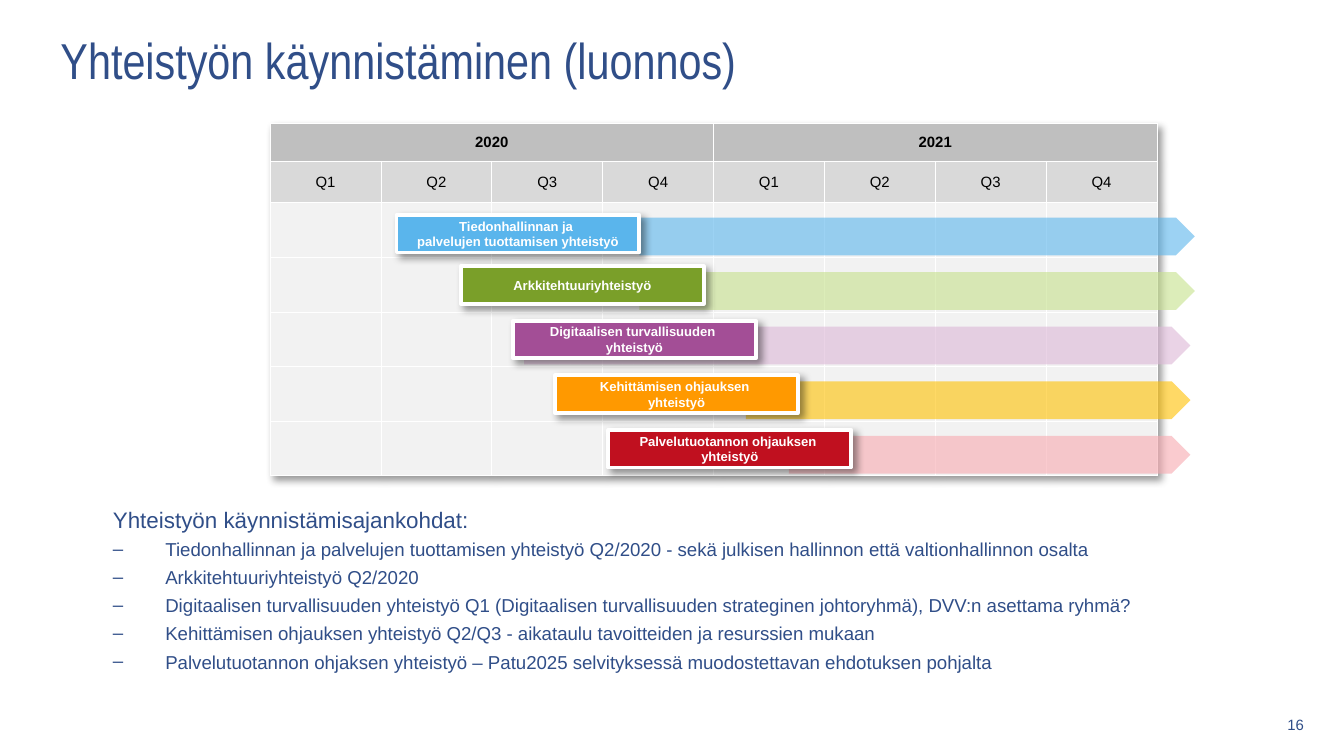
from dataclasses import dataclass

from lxml import etree
from pptx import Presentation
from pptx.dml.color import RGBColor
from pptx.enum import shapes, text
from pptx.oxml.ns import qn
from pptx.util import Emu, Inches, Pt

WIDE = Inches(10)
HIGH = WIDE * 9 // 16
LEFT, TOP = Inches(2.01), Inches(0.92)
COL, ROW = Inches(6.6) // 8, Inches(2.03) // 5
HEADS = Inches(0.28), Inches(0.31)
BODY = TOP + sum(HEADS)
BAR_W, BAR_H = 2.19, 0.69  # columns, rows

NAVY = RGBColor(0x30, 0x4E, 0x88)
BLACK = RGBColor(0, 0, 0)
WHITE = RGBColor(255, 255, 255)
GREYS = [RGBColor(0xBF, 0xBF, 0xBF), RGBColor(0xD9, 0xD9, 0xD9)] + [RGBColor(0xF2, 0xF2, 0xF2)] * 5
BLUE = RGBColor(0x5A, 0xB5, 0xEC)
LIME, GREEN = RGBColor(0xC6, 0xE1, 0x8B), RGBColor(0x7A, 0x9F, 0x29)
ROSE, RED = RGBColor(0xF8, 0xA9, 0xB0), RGBColor(0xC0, 0x10, 0x1F)
GOLD, AMBER = RGBColor(0xFF, 0xC0, 0x00), RGBColor(0xFF, 0x99, 0x00)
LILAC, PLUM = RGBColor(0xDC, 0xB6, 0xD6), RGBColor(0xA3, 0x4E, 0x96)

KIND = shapes.MSO_SHAPE
ALIGN = text.PP_ALIGN
MIDDLE = text.MSO_ANCHOR.MIDDLE


@dataclass
class Task:
    """One row of the plan; x values count columns, drop is a share of the row."""
    row: int
    start: float
    tail: float
    tip: float
    fill: RGBColor
    tint: RGBColor
    lines: list[str]
    drop: float = 0.16
    kind: KIND = KIND.RECTANGLE


TASKS = [
    Task(0, 1.14, 3.33, 8.34, BLUE, BLUE,
         ["Tiedonhallinnan ja ", "palvelujen tuottamisen yhteistyö"], 0.22, KIND.CHEVRON),
    Task(1, 1.72, 3.33, 8.34, GREEN, LIME, ["Arkkitehtuuriyhteistyö"]),
    Task(4, 3.05, 4.68, 8.3, RED, ROSE, ["Palvelutuotannon ohjauksen ", "yhteistyö"]),
    Task(3, 2.57, 4.29, 8.3, AMBER, GOLD, ["Kehittämisen ohjauksen ", "yhteistyö"]),
    Task(2, 2.19, 2.29, 8.3, PLUM, LILAC, ["Digitaalisen turvallisuuden ", "yhteistyö"]),
]
LIST = [
    "Tiedonhallinnan ja palvelujen tuottamisen yhteistyö Q2/2020 - sekä julkisen hallinnon että valtionhallinnon osalta",
    "Arkkitehtuuriyhteistyö Q2/2020",
    "Digitaalisen turvallisuuden yhteistyö Q1 (Digitaalisen turvallisuuden strateginen johtoryhmä), DVV:n asettama ryhmä?",
    "Kehittämisen ohjauksen yhteistyö Q2/Q3 - aikataulu tavoitteiden ja resurssien mukaan",
    "Palvelutuotannon ohjaksen yhteistyö – Patu2025 selvityksessä muodostettavan ehdotuksen pohjalta",
]


def node(root, tag: str, **attrs):
    return etree.SubElement(root, qn(tag), {k: str(v) for k, v in attrs.items()})


def write(para, words: str, size: float, color: RGBColor, align=ALIGN.LEFT,
          bold: bool = False, face: str = "Arial") -> None:
    para.alignment = align
    run = para.add_run()
    run.text = words
    font = run.font
    font.size, font.name, font.bold = Pt(size), face, bold
    font.color.rgb = color


def place(shape, x: float, y: float, w: float, h: float) -> None:
    """Move a shape to shares of the slide's size."""
    shape.left, shape.top = Emu(int(x * WIDE)), Emu(int(y * HIGH))
    shape.width, shape.height = Emu(int(w * WIDE)), Emu(int(h * HIGH))


def shade(effects) -> None:
    cast = node(effects, "a:outerShdw", blurRad=Pt(4), dist=Pt(3), dir=45 * 60000,
                algn="tl", rotWithShape=0)
    node(node(cast, "a:srgbClr", val="000000"), "a:alpha", val=40000)


def add_grid(slide) -> None:
    frame = slide.shapes.add_table(7, 8, LEFT, TOP, 8 * COL, sum(HEADS) + 5 * ROW)
    table = frame.table
    for col in table.columns:
        col.width = COL
    for row, high in zip(table.rows, [*HEADS] + [ROW] * 5):
        row.height = high
    words = {(0, 0): "2020", (0, 4): "2021"}
    words |= {(1, c): f"Q{c % 4 + 1}" for c in range(8)}
    for r, grey in enumerate(GREYS):
        for c in range(8):
            cell = table.cell(r, c)
            cell.vertical_anchor = MIDDLE
            para = cell.text_frame.paragraphs[0]
            if (r, c) in words:
                write(para, words[r, c], 8, BLACK, ALIGN.CENTER, r == 0)
            else:
                node(para._p, "a:endParaRPr", sz=800)
            props = cell._tc.get_or_add_tcPr()
            for side in "LRTB":
                edge = node(props, f"a:ln{side}", w=Pt(0.5))
                node(node(edge, "a:solidFill"), "a:srgbClr", val=WHITE)
            cell.fill.solid()
            cell.fill.fore_color.rgb = grey
    for c in (0, 4):
        table.cell(0, c).merge(table.cell(0, c + 3))
    props = table._tbl.tblPr
    effects = node(props, "a:effectLst")
    props.insert(0, effects)
    shade(effects)


def add_block(group, kind, x: float, y: float, w: float, fill: RGBColor):
    """Add a filled shape at grid columns and rows."""
    shape = group.shapes.add_shape(kind, int(LEFT + x * COL), int(BODY + y * ROW),
                                   int(w * COL), int(BAR_H * ROW))
    shape.shadow.inherit = False
    shape.fill.solid()
    shape.fill.fore_color.rgb = fill
    shape.line.fill.background()
    return shape


def add_task(slide, task: Task) -> None:
    group = slide.shapes.add_group_shape()
    arrow = add_block(group, KIND.PENTAGON, task.tail, task.row + 0.27,
                      task.tip - task.tail, task.tint)
    node(arrow._element.spPr.find(".//" + qn("a:srgbClr")), "a:alpha", val=60000)

    bar = add_block(group, task.kind, task.start, task.row + task.drop, BAR_W, task.fill)
    if task.kind == KIND.CHEVRON:
        bar.adjustments[0] = 0
    bar.line.color.rgb = WHITE
    bar.line.width = Pt(2)
    shade(bar._element.spPr.find(qn("a:effectLst")))
    frame = bar.text_frame
    frame.word_wrap = False
    frame.vertical_anchor = MIDDLE
    for i, line in enumerate(task.lines):
        para = frame.add_paragraph() if i else frame.paragraphs[0]
        write(para, line, 7, WHITE, ALIGN.CENTER, True)


def add_list(body) -> None:
    place(body, 0.074, 0.66, 0.859, 0.302)
    frame = body.text_frame
    frame.auto_size = text.MSO_AUTO_SIZE.NONE
    frame.vertical_anchor = text.MSO_ANCHOR.TOP
    for i, line in enumerate(["Yhteistyön käynnistämisajankohdat:"] + LIST):
        para = frame.add_paragraph() if i else frame.paragraphs[0]
        props = para._p.get_or_add_pPr()
        dent = Inches(0.39) if i else 0
        props.set("marL", str(dent))
        props.set("indent", str(-dent))
        if i:
            node(props, "a:buFont", typeface="Arial")
            node(props, "a:buChar", char="‒")
        else:
            node(props, "a:buNone")
        para.space_before, para.space_after = Pt(0), Pt(3)
        write(para, line, 10 if i else 12, NAVY)


def main() -> None:
    deck = Presentation()
    deck.slide_width, deck.slide_height = WIDE, HIGH
    slide = deck.slides.add_slide(deck.slide_layouts[1])

    title = slide.shapes.title
    place(title, 0.035, 0.028, 0.906, 0.101)
    title.text_frame.auto_size = text.MSO_AUTO_SIZE.NONE
    title.text_frame.vertical_anchor = MIDDLE
    write(title.text_frame.paragraphs[0], "Yhteistyön käynnistäminen (luonnos)", 27, NAVY,
          face="Arial Narrow")

    page = slide.shapes.add_textbox(0, 0, 0, 0)
    place(page, 0.928, 0.937, 0.052, 0.043)
    page.text_frame.word_wrap = True
    page.text_frame.vertical_anchor = MIDDLE
    write(page.text_frame.paragraphs[0], "16", 8, NAVY, ALIGN.RIGHT)

    add_list(slide.placeholders[1])
    add_grid(slide)
    for task in TASKS:
        add_task(slide, task)
    deck.save("out.pptx")


if __name__ == "__main__":
    main()
